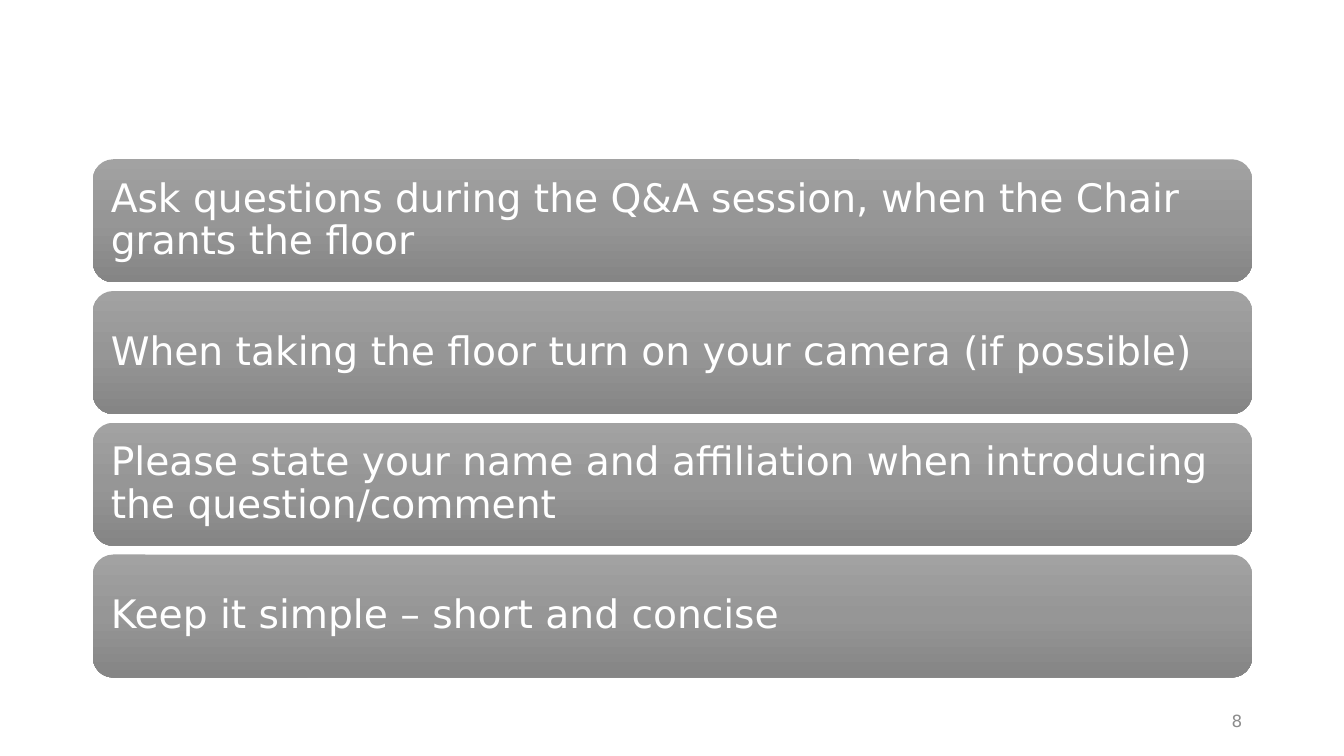
from copy import deepcopy

from pptx import Presentation
from pptx.dml.color import RGBColor
from pptx.enum.shapes import MSO_SHAPE
from pptx.enum.text import MSO_ANCHOR, PP_ALIGN
from pptx.util import Inches, Pt

WHITE = RGBColor(0xFF, 0xFF, 0xFF)
NUMBER_GREY = RGBColor(0x8C, 0x8C, 0x8C)
GRADIENT = [
    (0, RGBColor(0xA2, 0xA2, 0xA2)),
    (0.5, RGBColor(0x96, 0x96, 0x96)),
    (1, RGBColor(0x85, 0x85, 0x85)),
]
FONT = "DejaVu Sans"

RULES = [
    "Ask questions during the Q&A session, when the Chair grants the floor",
    "When taking the floor turn on your camera (if possible)",
    "Please state your name and affiliation when introducing the question/comment",
    "Keep it simple – short and concise",
]

# Bars: one column, evenly pitched rows
LEFT, TOP, WIDTH, HEIGHT = 0.92, 1.58, 11.5, 1.22
PITCH = 1.307
INSET = Inches(0.12)


def write_text(box, text, size, color, align):
    frame = box.text_frame
    frame.word_wrap = True
    frame.vertical_anchor = MSO_ANCHOR.MIDDLE
    para = frame.paragraphs[0]
    para.alignment = align
    span = para.add_run()
    span.text = text
    span.font.color.rgb = color
    for name, value in {"name": FONT, "size": Pt(size)}.items():
        setattr(span.font, name, value)
    return frame


deck = Presentation()
deck.slide_width, deck.slide_height = Inches(13.33), Inches(7.5)
page = deck.slides.add_slide(deck.slide_layouts[6])

# Rules for speakers
for row, rule in enumerate(RULES):
    bar = page.shapes.add_shape(
        MSO_SHAPE.ROUNDED_RECTANGLE,
        Inches(LEFT), Inches(TOP + row * PITCH), Inches(WIDTH), Inches(HEIGHT),
    )
    bar.shadow.inherit = False
    bar.line.fill.background()

    # Vertical gradient; the default one has two stops, so add a third
    bar.fill.gradient()
    bar.fill.gradient_angle = 270
    stop_list = bar.fill._fill._gradFill.gsLst
    stop_list.append(deepcopy(stop_list[0]))
    for stop, (position, color) in zip(bar.fill.gradient_stops, GRADIENT):
        stop.position = position
        stop.color.rgb = color

    frame = write_text(bar, rule, 28, WHITE, PP_ALIGN.LEFT)
    frame.paragraphs[0].line_spacing = 0.9
    for side in ("left", "top", "right", "bottom"):
        setattr(frame, f"margin_{side}", INSET)

# Page number
number = page.shapes.add_textbox(Inches(9.42), Inches(6.95), Inches(3), Inches(0.4))
write_text(number, "8", 12, NUMBER_GREY, PP_ALIGN.RIGHT)

deck.save("out.pptx")
